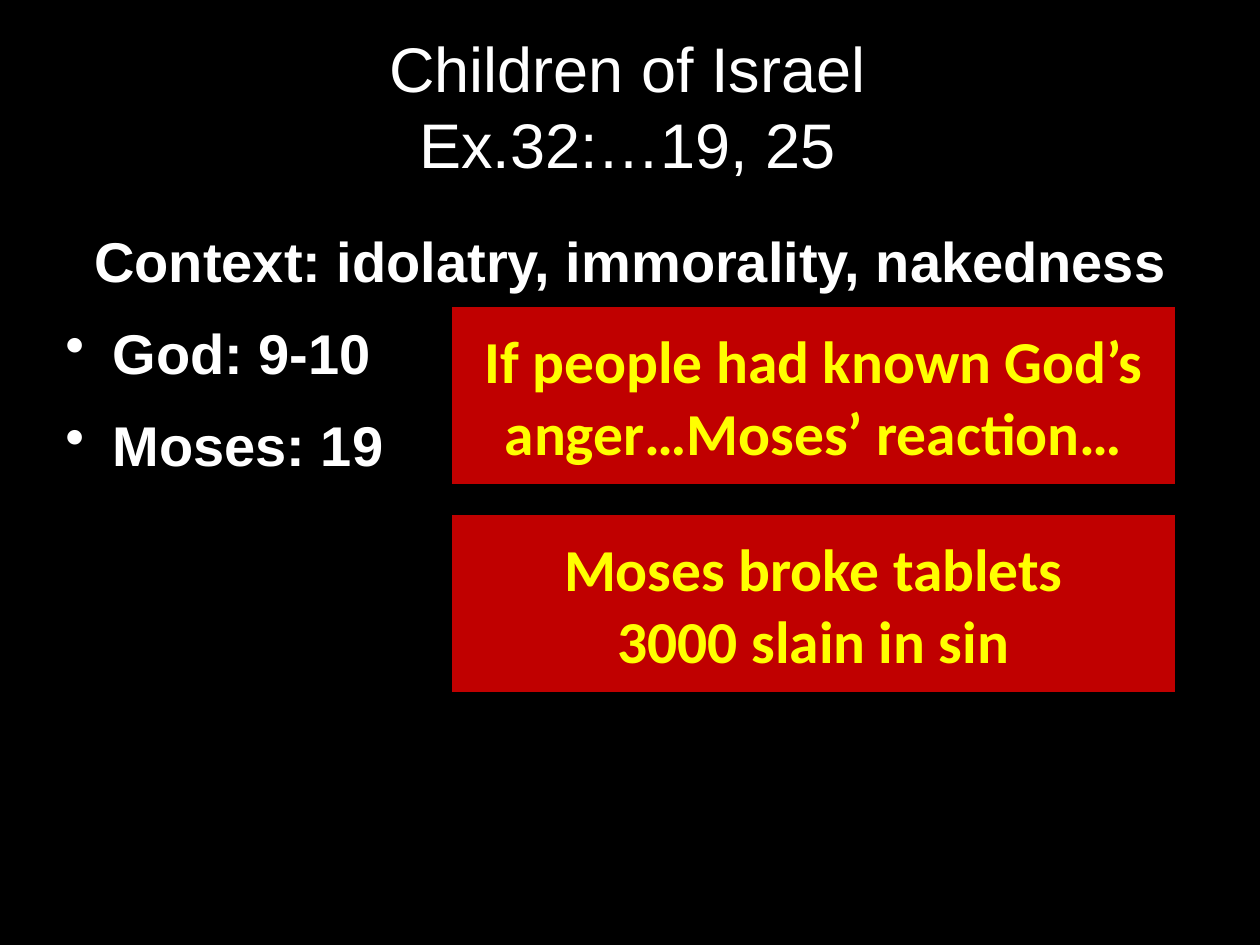
"""Build the slide on the children of Israel in Exodus 32."""
from lxml import etree
from pptx import Presentation
from pptx import util as u
from pptx.dml.color import RGBColor
from pptx.enum import shapes, text
from pptx.oxml.ns import qn


def paint(color_format, color):
    color_format.rgb = RGBColor.from_string(color)


def write(shape, lines, size, font, color, bold):
    frame = shape.text_frame
    frame.word_wrap = True
    frame.text = "\n".join(lines)
    for paragraph in frame.paragraphs:
        paragraph.alignment = text.PP_ALIGN.CENTER
        paragraph.font.size = u.Pt(size)
        paragraph.font.name = font
        paragraph.font.bold = bold
        paint(paragraph.font.color, color)
    return frame


presentation = Presentation()
presentation.slide_width = u.Cm(25.4)
presentation.slide_height = u.Cm(19.05)
slide = presentation.slides.add_slide(presentation.slide_layouts[6])
slide.background.fill.solid()
paint(slide.background.fill.fore_color, "000000")

title = slide.shapes.add_textbox(u.Cm(1.22), u.Cm(0.43), u.Cm(22.86), u.Cm(3.38))
title_frame = write(title, ["Children of Israel\vEx.32:…19, 25"], 36, "Arial", "FFFFFF", False)
title_frame.vertical_anchor = text.MSO_ANCHOR.MIDDLE

body = slide.shapes.add_textbox(u.Cm(1.07), u.Cm(4.45), u.Cm(23.29), u.Cm(13.34))
body_lines = ["Context: idolatry, immorality, nakedness", "God: 9-10", "Moses: 19"]
body_frame = write(body, body_lines, 32, "Arial", "FFFFFF", True)
for paragraph in body_frame.paragraphs:
    paragraph.space_before = u.Pt(8)
    paragraph.space_after = u.Pt(6)
for paragraph in body_frame.paragraphs[1:]:
    paragraph.alignment = text.PP_ALIGN.LEFT
    properties = paragraph._p.get_or_add_pPr()
    properties.set("marL", str(u.Cm(0.95)))
    properties.set("indent", str(-u.Cm(0.95)))
    bullet = etree.Element(qn("a:buChar"), char="•")
    properties.find(qn("a:spcAft")).addnext(bullet)

callouts = [
    ["If people had known God’s anger…Moses’ reaction…"],
    ["Moses broke tablets", "3000 slain in sin"],
]
for row, lines in enumerate(callouts):
    callout = slide.shapes.add_shape(
        shapes.MSO_SHAPE.RECTANGLE,
        u.Cm(9.1), u.Cm(6.18 + 4.19 * row), u.Cm(14.6), u.Cm(3.6))
    callout.shadow.inherit = False
    callout.fill.solid()
    paint(callout.fill.fore_color, "C00000")
    paint(callout.line.color, "000000")
    callout.line.width = u.Pt(0.75)
    callout_frame = write(callout, lines, 34, "Calibri", "FFFF00", True)
    callout_frame.vertical_anchor = text.MSO_ANCHOR.MIDDLE

presentation.save("out.pptx")
